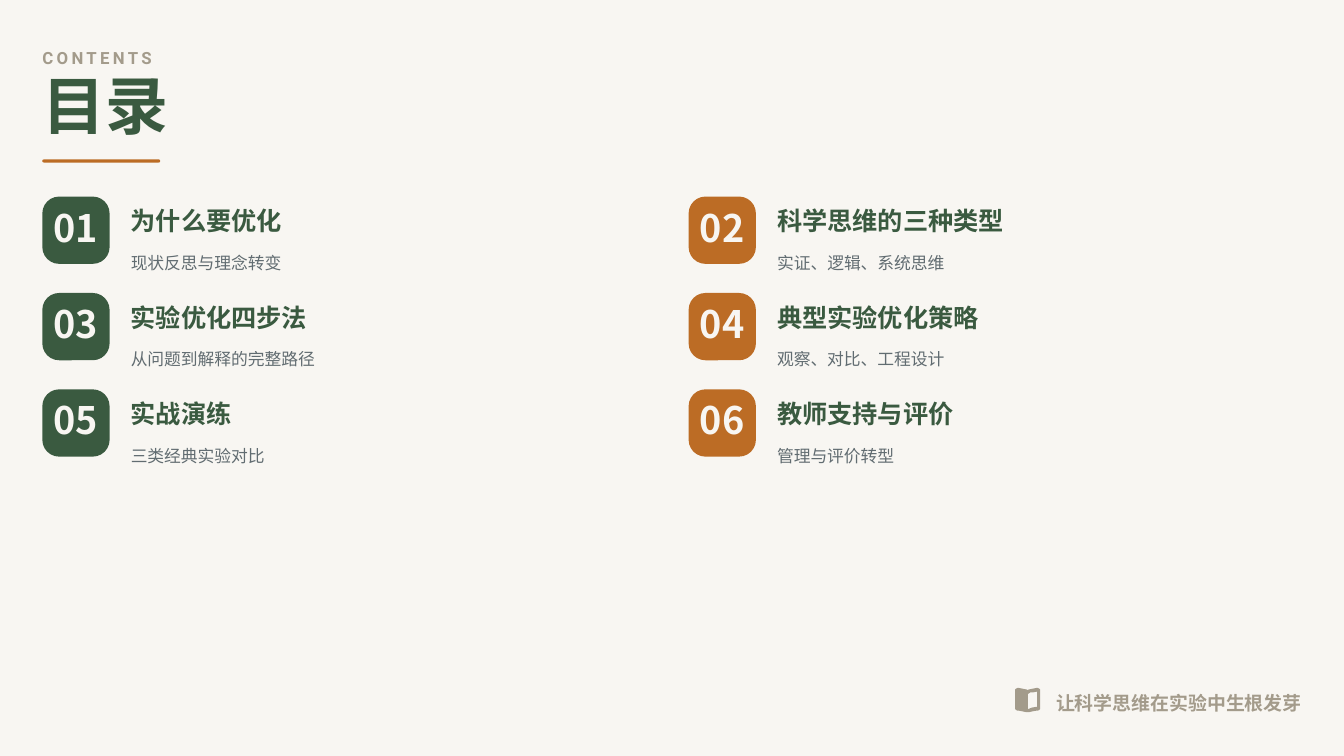
from lxml.etree import SubElement
from pptx import Presentation
from pptx.dml.color import RGBColor
from pptx.enum.shapes import MSO_SHAPE
from pptx.enum.text import MSO_ANCHOR
from pptx.oxml.ns import qn
from pptx.util import Inches, Pt

CREAM = RGBColor(0xF8, 0xF6, 0xF2)
GREEN = RGBColor(0x3A, 0x5A, 0x40)
ORANGE = RGBColor(0xBC, 0x6C, 0x25)
TAUPE = RGBColor(0xA3, 0x9B, 0x8B)
SLATE = RGBColor(0x2F, 0x3E, 0x46)
HAN = "Noto Sans CJK SC"
LATIN = "Roboto"

# Number, title, subtitle and title width of each chapter
CHAPTERS = [
    ("01", "为什么要优化", "现状反思与理念转变", 2.17),
    ("02", "科学思维的三种类型", "实证、逻辑、系统思维", 3.17),
    ("03", "实验优化四步法", "从问题到解释的完整路径", 2.61),
    ("04", "典型实验优化策略", "观察、对比、工程设计", 2.83),
    ("05", "实战演练", "三类经典实验对比", 1.94),
    ("06", "教师支持与评价", "管理与评价转型", 2.5),
]

# Outline and open page of the book icon, in hundredths of an inch
COVER = [(0, 4), (1, 3), (3, 2), (5, 2), (10, 3), (15, 4), (17, 5), (18, 4),
         (23, 3), (28, 2), (30, 2), (32, 3), (33, 4), (33, 30), (32, 31),
         (30, 32), (28, 32), (23, 33), (18, 34), (17, 34), (15, 34),
         (10, 33), (5, 32), (3, 32), (1, 31), (0, 30)]
PAGE = [(17, 10), (17, 30), (22, 28), (28, 27), (29, 27), (29, 7),
        (28, 7), (23, 8), (20, 8)]


def add_text(slide, box, text, size, color, font=HAN, bold=True, leading=None):
    frame = slide.shapes.add_textbox(*map(Inches, box)).text_frame
    frame.margin_left = frame.margin_right = 0
    frame.margin_top = frame.margin_bottom = 0
    frame.word_wrap = True
    frame.vertical_anchor = MSO_ANCHOR.MIDDLE
    frame.text = text
    line = frame.paragraphs[0]
    if leading:
        line.line_spacing = leading
    run = line.runs[0]
    run.font.size, run.font.bold, run.font.name = Pt(size), bold, font
    run.font.color.rgb = color
    props = run._r.get_or_add_rPr()
    SubElement(props, qn("a:ea")).set("typeface", HAN)
    return props


def paint(shape, color):
    shape.shadow.inherit = False
    shape.fill.solid()
    shape.fill.fore_color.rgb = color
    shape.line.fill.background()


def add_block(slide, box, color, corner):
    shape = slide.shapes.add_shape(MSO_SHAPE.ROUNDED_RECTANGLE, *map(Inches, box))
    shape.adjustments[0] = corner
    paint(shape, color)


def add_header(slide, left, top):
    props = add_text(slide, (left, top, 16.78, 0.33), "CONTENTS", 16, TAUPE,
                     LATIN, leading=1.3)
    props.set("spc", "320")
    add_text(slide, (left, top + 0.5, 17.08, 0.83), "目录", 60, GREEN, leading=0.8)
    add_block(slide, (left, top + 1.55, 1.56, 0.04), ORANGE, 0.5)


def add_chapter(slide, left, top, color, number, title, note, width):
    add_block(slide, (left, top, 0.89, 0.89), color, 0.25)
    add_text(slide, (left + 0.15, top + 0.16, 0.83, 0.56), number, 36, CREAM,
             leading=0.9)
    add_text(slide, (left + 1.17, top + 0.11, width, 0.42), title, 24, GREEN)
    props = add_text(slide, (left + 1.17, top + 0.64, width - 0.06, 0.36), note,
                     16, SLATE, LATIN, bold=False, leading=1.4)
    tint = props.find(qn("a:solidFill")).find(qn("a:srgbClr"))
    SubElement(tint, qn("a:alpha")).set("val", "75000")


def add_footer(slide, left, top):
    # Book icon, with the page cut out of the cover
    book = slide.shapes.build_freeform(*COVER[0], scale=Inches(0.01))
    book.add_line_segments(COVER[1:])
    book.move_to(*PAGE[0])
    book.add_line_segments(PAGE[1:])
    paint(book.convert_to_shape(Inches(left), Inches(top)), TAUPE)
    add_text(slide, (left + 0.54, top - 0.02, 3.38, 0.39),
             "让科学思维在实验中生根发芽", 18, TAUPE, LATIN, leading=1.3)


def main():
    deck = Presentation()
    deck.slide_width, deck.slide_height = Inches(17.78), Inches(10)
    slide = deck.slides.add_slide(deck.slide_layouts[6])
    slide.background.fill.solid()
    slide.background.fill.fore_color.rgb = CREAM

    add_header(slide, 0.56, 0.56)
    # Chapters in two columns and three rows
    for index, chapter in enumerate(CHAPTERS):
        row, col = divmod(index, 2)
        add_chapter(slide, 0.56 + 8.55 * col, 2.6 + 2.55 * row / 2,
                    (GREEN, ORANGE)[col], *chapter)
    add_footer(slide, 13.43, 9.08)
    deck.save("out.pptx")


if __name__ == "__main__":
    main()
